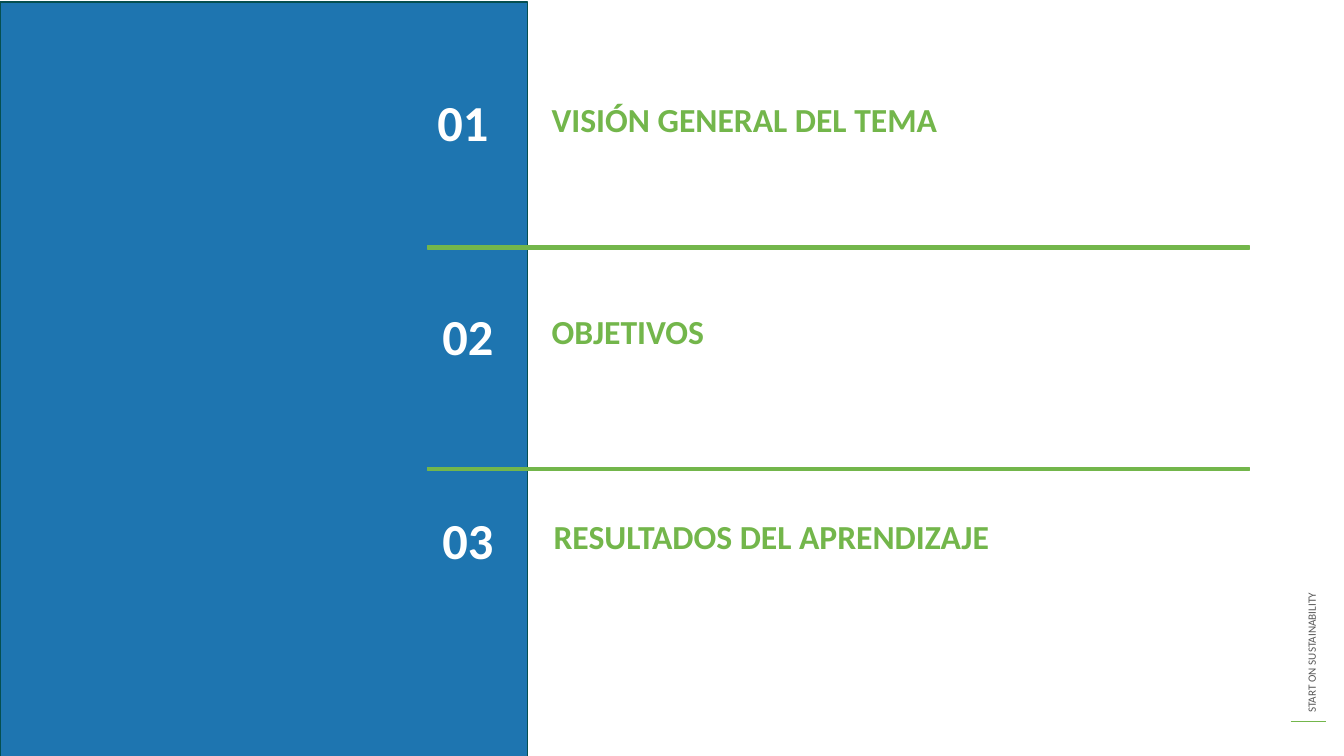
from lxml.etree import SubElement
from pptx import Presentation
from pptx.dml.color import RGBColor
from pptx.enum.shapes import MSO_CONNECTOR, MSO_SHAPE
from pptx.enum.text import MSO_ANCHOR, MSO_AUTO_SIZE, PP_ALIGN
from pptx.oxml.ns import qn
from pptx.util import Inches, Pt

GREEN = RGBColor(0x73, 0xB6, 0x4B)
BLUE = RGBColor(0x1E, 0x75, 0xB0)
DARK_TEAL = RGBColor(0x05, 0x4F, 0x50)
WHITE = RGBColor(0xFF, 0xFF, 0xFF)
GREY = RGBColor(0x59, 0x59, 0x59)

WIDTH, HEIGHT = 13.33, 7.5
TOPICS = [
    {"number": "01", "number_at": (4.24, 0.67),
     "heading": "VISIÓN GENERAL DEL TEMA", "heading_at": (5.37, 0.93)},
    {"number": "02", "number_at": (4.29, 2.8),
     "heading": "OBJETIVOS", "heading_at": (5.37, 3.03)},
    {"number": "03", "number_at": (4.29, 4.82),
     "heading": "RESULTADOS DEL APRENDIZAJE", "heading_at": (5.39, 5.07)},
]
FOOTER = "START ON SUSTAINABILITY"
NUMBER_SIZE = (1.35, 1.05)
HEADING_SIZE = (7.18, 0.37)
DIVIDER_TOP, DIVIDER_STEP = 2.44, 2.2

FRAME_FORMAT = {
    "word_wrap": True, "auto_size": MSO_AUTO_SIZE.NONE,
    "vertical_anchor": MSO_ANCHOR.TOP,
    "margin_left": Inches(0.1), "margin_right": Inches(0.1),
    "margin_top": Inches(0.05), "margin_bottom": Inches(0.05),
}
HEADING_FONT = {"size": Pt(24), "bold": True}
NUMBER_FONT = {"size": Pt(36), "bold": True}
FOOTER_FONT = {"size": Pt(8), "bold": False}


def apply(target, values):
    for name, value in values.items():
        setattr(target, name, value)


def place(box, position, size):
    names = ("left", "top", "width", "height")
    apply(box, dict(zip(names, map(Inches, position + size))))


def write(box, text, font, color, spacing=1.0):
    apply(box.text_frame, FRAME_FORMAT)
    para = box.text_frame.paragraphs[0]
    apply(para, {"alignment": PP_ALIGN.LEFT, "line_spacing": spacing,
                 "space_before": Pt(0), "space_after": Pt(0)})
    span = para.add_run()
    span.text = text
    apply(span.font, {"name": "Calibri", **font})
    span.font.color.rgb = color


def add_text(page, position, size, *style):
    box = page.shapes.add_textbox(*map(Inches, position + size))
    write(box, *style)
    return box


def add_heading(box, topic):
    place(box, topic["heading_at"], HEADING_SIZE)
    write(box, topic["heading"], HEADING_FONT, GREEN)
    properties = box.text_frame.paragraphs[0]._p.get_or_add_pPr()
    properties.set("marL", "0")
    properties.set("indent", "0")
    SubElement(properties, qn("a:buNone"))


def add_block(page, position, size, fill, line):
    block = page.shapes.add_shape(
        MSO_SHAPE.RECTANGLE, *map(Inches, position + size))
    block.shadow.inherit = False
    block.fill.solid()
    block.fill.fore_color.rgb = fill
    block.line.color.rgb = line
    block.line.width = Pt(1)
    return block


def main():
    deck = Presentation()
    deck.slide_width, deck.slide_height = Inches(WIDTH), Inches(HEIGHT)
    page = deck.slides.add_slide(deck.slide_layouts.get_by_name("Comparison"))
    title, *bodies = page.placeholders
    heading_boxes = bodies[:len(TOPICS)]
    for unused in [title, *bodies[len(TOPICS):]]:
        unused.element.getparent().remove(unused.element)

    panel = add_block(page, (0, 0.02), (5.23, HEIGHT), BLUE, DARK_TEAL)
    heading_boxes[0].element.addprevious(panel.element)

    for box, topic in zip(heading_boxes, TOPICS):
        add_heading(box, topic)
        add_text(page, topic["number_at"], NUMBER_SIZE,
                 topic["number"], NUMBER_FONT, WHITE, 1.3)

    for row in range(len(TOPICS) - 1):
        add_block(page, (4.24, DIVIDER_TOP + row * DIVIDER_STEP),
                  (8.15, 0.03), GREEN, GREEN)

    footer = add_text(page, (10.78, 4.82), (4.46, 0.24),
                      FOOTER, FOOTER_FONT, GREY)
    footer.rotation = 270
    rule = page.shapes.add_connector(
        MSO_CONNECTOR.STRAIGHT, *map(Inches, (12.8, 7.16, 13.15, 7.16)))
    rule.line.color.rgb = GREEN
    rule.line.width = Pt(1)
    SubElement(rule.element.spPr, qn("a:effectLst"))

    deck.save("out.pptx")


if __name__ == "__main__":
    main()
